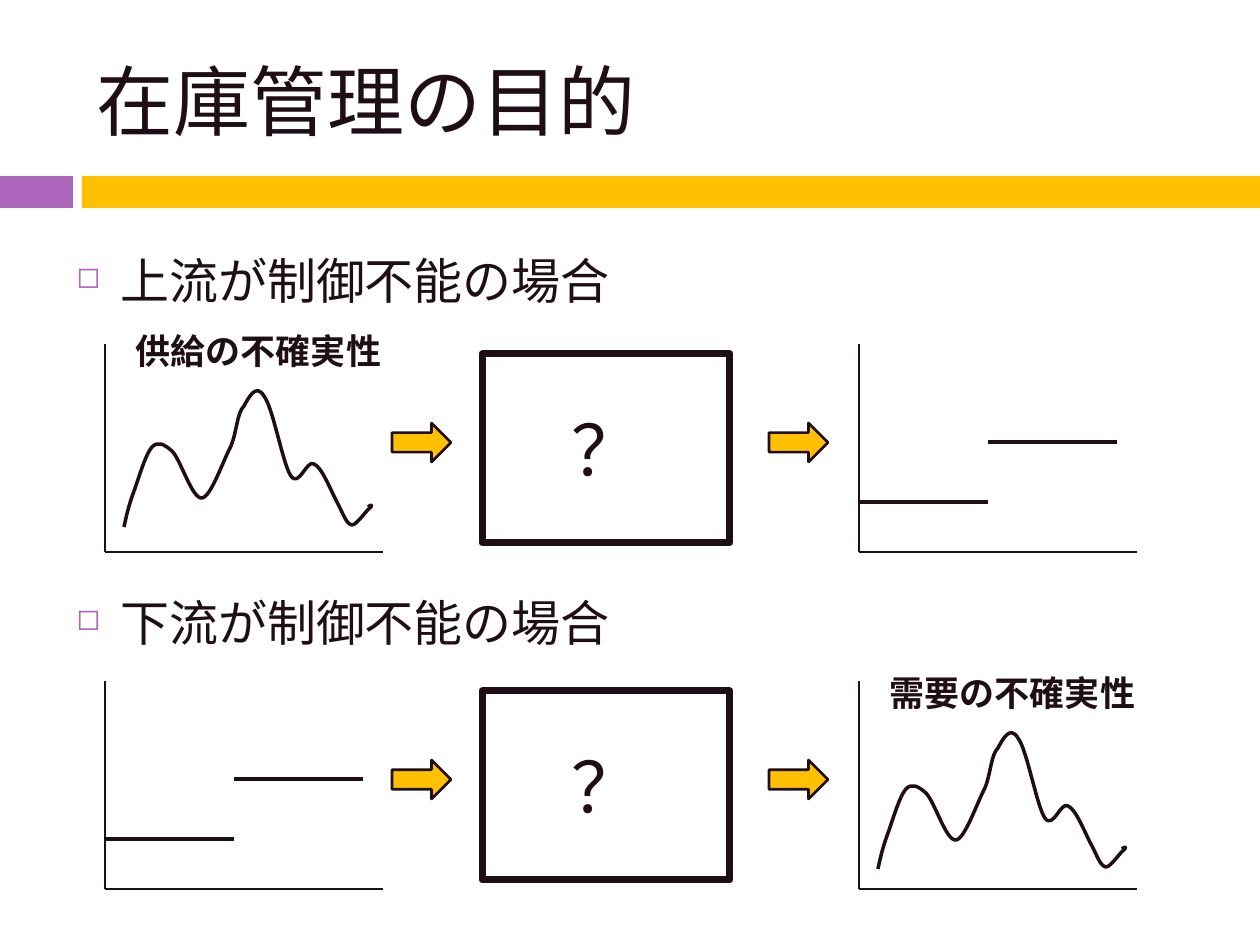
from dataclasses import dataclass

from lxml import etree
from pptx import Presentation
from pptx import util as u
from pptx.dml.color import RGBColor
from pptx.enum import shapes, text
from pptx.oxml import ns

PX = 914400 / 126


@dataclass(frozen=True)
class Theme:
    ink: str = "200E17"
    purple: str = "AC66BB"
    yellow: str = "FFC000"
    body_font: str = "Noto Sans CJK JP"
    mark_font: str = "Cabin"
    title_size: int = 44
    mark_size: int = 40
    heading_size: int = 28
    label_size: int = 20
    thin: float = 1.5
    medium: int = 2
    thick: int = 4


THEME = Theme()
CURVE_START = (19, 183)
CURVE = [
    (21, 174), (23, 164), (28, 150),
    (33, 137), (40, 111), (47, 103),
    (53, 97), (59, 100), (67, 107),
    (76, 116), (87, 155), (97, 154),
    (106, 153), (118, 117), (126, 102),
    (132, 87), (132, 69), (139, 62),
    (144, 53), (151, 39), (159, 52),
    (168, 63), (178, 121), (186, 132),
    (194, 144), (202, 115), (209, 120),
    (217, 123), (226, 147), (232, 158),
    (238, 169), (241, 180), (247, 181),
    (252, 181), (262, 165), (266, 163),
    (268, 159), (263, 163), (263, 163),
]


def px(value):
    return u.Emu(round(value * PX))


def child(parent, tag, **values):
    element = etree.SubElement(parent, ns.qn(tag))
    for name, value in values.items():
        element.set(name, value)
    return element


def set_line(shape, width):
    shape.line.color.rgb = RGBColor.from_string(THEME.ink)
    shape.line.width = u.Pt(width)


def fill_paragraph(paragraph, words, size, font=THEME.body_font, align=None, bold=False):
    paragraph.alignment = align
    run = paragraph.add_run()
    run.text = words
    for name, value in {"name": font, "size": u.Pt(size), "bold": bold}.items():
        setattr(run.font, name, value)
    run.font.color.rgb = RGBColor.from_string(THEME.ink)
    child(run.font._element, "a:ea", typeface=font)


def write(shape, words, size, anchor=text.MSO_ANCHOR.TOP, **formats):
    frame = shape.text_frame
    frame.word_wrap = True
    frame.vertical_anchor = anchor
    fill_paragraph(frame.paragraphs[0], words, size, **formats)


def add_text(slide, box, words, size, **formats):
    write(slide.shapes.add_textbox(*map(px, box)), words, size, **formats)


def add_block(slide, kind, box, fill=None, line=None):
    shape = slide.shapes.add_shape(kind, *map(px, box))
    shape.shadow.inherit = False
    if fill:
        shape.fill.solid()
        shape.fill.fore_color.rgb = RGBColor.from_string(fill)
    else:
        shape.fill.background()
    if line:
        set_line(shape, line)
    else:
        shape.line.fill.background()
    return shape


def add_line(slide, start, end, width):
    connector = slide.shapes.add_connector(
        shapes.MSO_CONNECTOR.STRAIGHT, *map(px, (*start, *end)))
    set_line(connector, width)
    child(connector._element.spPr, "a:effectLst")


def add_curve(slide, left, top):
    start, *points = [(left + x, top + y) for x, y in (CURVE_START, *CURVE)]
    builder = slide.shapes.build_freeform(*start, scale=PX)
    builder.add_line_segments(points, close=False)
    curve = builder.convert_to_shape()
    corners = list(curve._element.iter(ns.qn("a:lnTo")))
    outline = corners[0].getparent()
    for index in range(0, len(corners), 3):
        bend = child(outline, "a:cubicBezTo")
        for corner in corners[index:index + 3]:
            bend.append(corner[0])
            outline.remove(corner)
    curve.shadow.inherit = False
    curve.fill.background()
    set_line(curve, THEME.medium)


def add_header(slide, left, top, width):
    rectangle = shapes.MSO_SHAPE.RECTANGLE
    add_block(slide, rectangle, (left, top + 176, 73, 32), THEME.purple)
    add_block(slide, rectangle, (left + 82, top + 176, width - 82, 32), THEME.yellow)
    add_text(slide, (left + 84, top + 32, 1124, 136), "在庫管理の目的",
             THEME.title_size, anchor=text.MSO_ANCHOR.MIDDLE)


def add_headings(slide, left, top, width, height, headings, gap):
    frame = slide.shapes.add_textbox(*map(px, (left, top, width, height))).text_frame
    frame.word_wrap = True
    for index, words in enumerate(headings):
        paragraph = frame.add_paragraph() if index else frame.paragraphs[0]
        paragraph.space_before = u.Pt(gap if index else 0)
        fill_paragraph(paragraph, words, THEME.heading_size)
        properties = paragraph._p.get_or_add_pPr()
        indent = px(44)
        properties.set("marL", str(indent))
        properties.set("indent", str(-indent))
        colour = child(properties, "a:buClr")
        child(colour, "a:srgbClr", val=THEME.purple)
        child(properties, "a:buSzPct", val="60000")
        child(properties, "a:buChar", char="◻")


def add_axes(slide, left, top, width, height):
    corner = (left, top + height)
    add_line(slide, (left, top), corner, THEME.thin)
    add_line(slide, corner, (left + width, top + height), THEME.thin)


def add_step_graph(slide, left, top, width, height):
    add_axes(slide, left, top, width, height)
    for index, level in enumerate((158, 98)):
        start = left + index * 129
        add_line(slide, (start, top + level), (start + 129, top + level), THEME.medium)


def add_wave_graph(slide, left, top, width, height, label, drop):
    add_axes(slide, left, top, width, height)
    add_curve(slide, left, top + drop)
    add_text(slide, (left + 10, top + drop - 21, 287, 55), label, THEME.label_size,
             align=text.PP_ALIGN.CENTER, bold=True)


def add_flow(slide, left, top):
    for offset in (287, 664):
        add_block(slide, shapes.MSO_SHAPE.RIGHT_ARROW,
                  (left + offset, top + 79, 59, 39), THEME.yellow, THEME.thin)
    unknown = add_block(slide, shapes.MSO_SHAPE.RECTANGLE,
                        (left + 377, top + 10, 248, 189), line=THEME.thick)
    write(unknown, "？", THEME.mark_size, font=THEME.mark_font,
          align=text.PP_ALIGN.CENTER, anchor=text.MSO_ANCHOR.MIDDLE)


def main():
    presentation = Presentation()
    presentation.slide_width, presentation.slide_height = px(1260), px(945)
    slide = presentation.slides.add_slide(presentation.slide_layouts[6])
    add_header(slide, 0, 0, 1260)
    add_headings(slide, 64, 244, 1160, 674,
                 ("上流が制御不能の場合", "下流が制御不能の場合"), 162)

    left, right, upper, lower = 105, 859, 344, 681
    graph = (278, 208)
    add_flow(slide, left, upper)
    add_wave_graph(slide, left, upper, *graph, "供給の不確実性", 0)
    add_step_graph(slide, right, upper, *graph)

    add_flow(slide, left, lower)
    add_step_graph(slide, left, lower, *graph)
    add_wave_graph(slide, right, lower, *graph, "需要の不確実性", 5)
    presentation.save("out.pptx")


if __name__ == "__main__":
    main()
